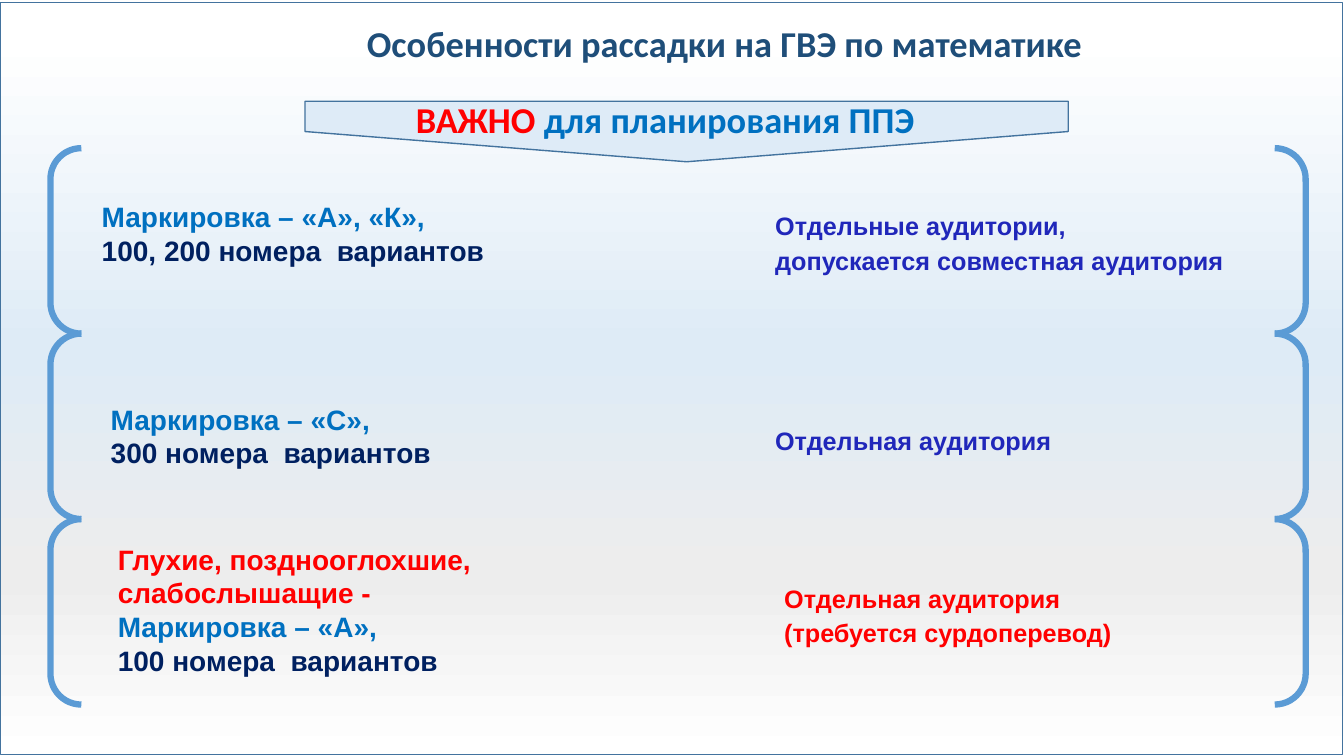
from lxml import etree
from pptx import Presentation
from pptx.dml.color import RGBColor
from pptx.enum.shapes import MSO_SHAPE
from pptx.enum.text import MSO_ANCHOR, MSO_AUTO_SIZE, PP_ALIGN
from pptx.oxml.ns import qn
from pptx.util import Emu, Pt

RECTANGLE = MSO_SHAPE.RECTANGLE
PENTAGON = MSO_SHAPE.PENTAGON
BRACKET_PAIR = MSO_SHAPE.DOUBLE_BRACKET
MIDDLE = MSO_ANCHOR.MIDDLE
TOP = MSO_ANCHOR.TOP
CENTER = PP_ALIGN.CENTER
LEFT = PP_ALIGN.LEFT
GROW = MSO_AUTO_SIZE.SHAPE_TO_FIT_TEXT
FIXED = MSO_AUTO_SIZE.NONE

WHITE = RGBColor(0xFF, 0xFF, 0xFF)
PALE_BLUE = RGBColor(0xDE, 0xEB, 0xF6)
PALE_GREY = RGBColor(0xED, 0xED, 0xED)
BANNER_BLUE = RGBColor(0xDE, 0xEB, 0xF7)
OUTLINE_BLUE = RGBColor(0x43, 0x73, 0x9E)
BRACKET_BLUE = RGBColor(0x5B, 0x9B, 0xD5)
TITLE_BLUE = RGBColor(0x1F, 0x4E, 0x79)
BRIGHT_BLUE = RGBColor(0x00, 0x70, 0xC0)
NAVY = RGBColor(0x00, 0x20, 0x60)
INDIGO = RGBColor(0x20, 0x27, 0xBA)
RED = RGBColor(0xFF, 0x00, 0x00)

PX = 9144
SLIDE_WIDTH, SLIDE_HEIGHT = 1333, 750
BRACKET_TOP, BRACKET_HEIGHT = 147, 184

BACKGROUND_STOPS = [(5, WHITE), (46, PALE_BLUE), (76, PALE_GREY), (100, WHITE)]
HEADING = dict(font="Calibri", size=26, align=CENTER, spacing=0.9,
               anchor=MIDDLE, inset=4, auto_size=FIXED)
MARKING = dict(size=20, indent=39)
ROOM = dict(size=18, spacing=1.15)


class SlideBuilder:
    def __init__(self, presentation):
        layout = presentation.slide_layouts[6]
        self.slide = presentation.slides.add_slide(layout)

    def box(self, bounds):
        return [Emu(length * PX) for length in bounds]

    def background(self, stops):
        fill = self.slide.background.fill
        fill.gradient()
        fill.gradient_angle = 270
        stop_list = self.slide.element.find(".//" + qn("a:gsLst"))
        for stop in list(stop_list):
            stop_list.remove(stop)
        for position, color in stops:
            stop = etree.SubElement(stop_list, qn("a:gs"), pos=str(position * 1000))
            etree.SubElement(stop, qn("a:srgbClr"), val=str(color))

    def shape(self, kind, bounds, line, width, fill=None, rotation=0):
        shape = self.slide.shapes.add_shape(kind, *self.box(bounds))
        shape.shadow.inherit = False
        shape.rotation = rotation
        shape.line.color.rgb = line
        shape.line.width = Pt(width)
        if fill is None:
            shape.fill.background()
        else:
            shape.fill.solid()
            shape.fill.fore_color.rgb = fill

    def text(self, bounds, paragraphs, size, font="Arial", align=LEFT, spacing=1.0,
             anchor=TOP, inset=None, indent=0, auto_size=GROW):
        frame = self.slide.shapes.add_textbox(*self.box(bounds)).text_frame
        frame.word_wrap = True
        frame.auto_size = auto_size
        frame.vertical_anchor = anchor
        if inset is not None:
            frame.margin_left = frame.margin_right = Emu(inset * PX)
            frame.margin_top = frame.margin_bottom = Emu(inset * PX)
        for index, runs in enumerate(paragraphs):
            paragraph = frame.add_paragraph() if index else frame.paragraphs[0]
            paragraph.alignment = align
            paragraph.line_spacing = spacing
            if indent:
                properties = paragraph._p.get_or_add_pPr()
                properties.set("marL", str(indent * PX))
                properties.set("indent", "0")
            for content, color in runs:
                run = paragraph.add_run()
                run.text = content
                run.font.name = font
                run.font.size = Pt(size)
                run.font.bold = True
                run.font.color.rgb = color


def main():
    presentation = Presentation()
    presentation.slide_width = Emu(SLIDE_WIDTH * PX)
    presentation.slide_height = Emu(SLIDE_HEIGHT * PX)
    builder = SlideBuilder(presentation)

    builder.background(BACKGROUND_STOPS)
    builder.shape(RECTANGLE, (0, 2, 1331, 746), OUTLINE_BLUE, 0.25)
    builder.text((131, 0, 1176, 91),
                 [[("Особенности рассадки на ГВЭ по математике", TITLE_BLUE)]], **HEADING)

    builder.shape(PENTAGON, (651, -248, 60, 757), OUTLINE_BLUE, 1,
                  fill=BANNER_BLUE, rotation=90)
    builder.text((72, 75, 1176, 91),
                 [[("ВАЖНО", RED), (" для планирования ППЭ", BRIGHT_BLUE)]], **HEADING)

    markings = [
        ((52, 193, 585, 77),
         [[("Маркировка – «А», «К»,", BRIGHT_BLUE)],
          [("100, 200 номера  вариантов", NAVY)]]),
        ((61, 394, 590, 77),
         [[("Маркировка – «С»,", BRIGHT_BLUE)],
          [("300 номера  вариантов", NAVY)]]),
        ((68, 533, 604, 178),
         [[("Глухие, позднооглохшие, слабослышащие -", RED)],
          [("Маркировка – «А»,", BRIGHT_BLUE)],
          [("100 номера  вариантов", NAVY)]]),
    ]
    rooms = [
        ((759, 199, 601, 80),
         [[("Отдельные аудитории,", INDIGO)],
          [("допускается совместная аудитория", INDIGO)]]),
        ((759, 413, 517, 42),
         [[("Отдельная аудитория", INDIGO)]]),
        ((768, 569, 566, 80),
         [[("Отдельная аудитория", RED)],
          [("(требуется сурдоперевод)", RED)]]),
    ]
    for row, (marking, room) in enumerate(zip(markings, rooms)):
        builder.text(*marking, **MARKING)
        builder.text(*room, **ROOM)
        top = BRACKET_TOP + row * BRACKET_HEIGHT
        builder.shape(BRACKET_PAIR, (50, top, 1245, BRACKET_HEIGHT), BRACKET_BLUE, 4.5)

    presentation.save("out.pptx")


if __name__ == "__main__":
    main()
